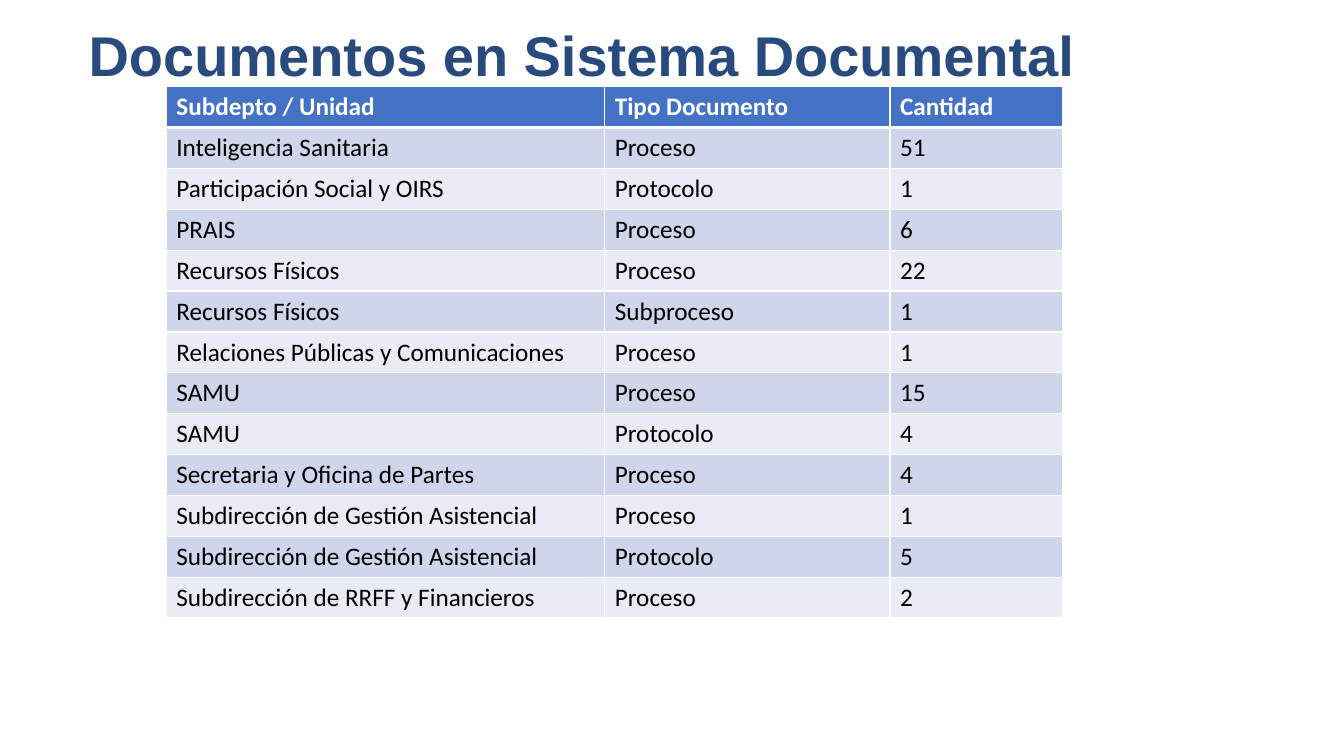
from dataclasses import dataclass
from typing import NamedTuple

from lxml.etree import SubElement
from pptx import Presentation
from pptx.dml.color import RGBColor
from pptx.enum.text import MSO_ANCHOR
from pptx.oxml.ns import qn
from pptx.slide import Slide
from pptx.table import _Cell
from pptx.util import Pt


@dataclass(frozen=True)
class Theme:
    title_font: str = "Arial"
    table_font: str = "Calibri"
    title_size: float = 40
    table_size: float = 18
    title: str = "284A7C"
    header_fill: str = "4472C4"
    header_text: str = "FFFFFF"
    body_text: str = "000000"
    bands: tuple[str, str] = ("CFD5EA", "E9EBF5")
    border: str = "FFFFFF"
    thin: float = 1
    thick: float = 3


class DocumentCount(NamedTuple):
    unit: str
    kind: str
    amount: str


THEME = Theme()
HEADINGS = DocumentCount("Subdepto / Unidad", "Tipo Documento", "Cantidad")
COUNTS = [
    DocumentCount("Inteligencia Sanitaria", "Proceso", "51"),
    DocumentCount("Participación Social y OIRS", "Protocolo", "1"),
    DocumentCount("PRAIS", "Proceso", "6"),
    DocumentCount("Recursos Físicos", "Proceso", "22"),
    DocumentCount("Recursos Físicos", "Subproceso", "1"),
    DocumentCount("Relaciones Públicas y Comunicaciones", "Proceso", "1"),
    DocumentCount("SAMU", "Proceso", "15"),
    DocumentCount("SAMU", "Protocolo", "4"),
    DocumentCount("Secretaria y Oficina de Partes", "Proceso", "4"),
    DocumentCount("Subdirección de Gestión Asistencial", "Proceso", "1"),
    DocumentCount("Subdirección de Gestión Asistencial", "Protocolo", "5"),
    DocumentCount("Subdirección de RRFF y Financieros", "Proceso", "2"),
]
COLUMN_WIDTHS = (313.2, 203.8, 123.1)
ROW_HEIGHT = 29.2


def add_title(slide: Slide, wording: str) -> None:
    heading = slide.shapes.add_textbox(Pt(56.2), Pt(0), Pt(864.7), Pt(104.4)).text_frame
    heading.word_wrap = True
    heading.vertical_anchor = MSO_ANCHOR.MIDDLE
    heading.margin_bottom = Pt(30)
    heading.text = wording
    font = heading.paragraphs[0].font
    font.name, font.size, font.bold = THEME.title_font, Pt(THEME.title_size), True
    font.color.rgb = RGBColor.from_string(THEME.title)


def add_borders(cell: _Cell, top: float, bottom: float) -> None:
    properties = cell._tc.get_or_add_tcPr()
    widths = {"lnL": THEME.thin, "lnR": THEME.thin, "lnT": top, "lnB": bottom}
    for side, width in widths.items():
        line = SubElement(properties, qn(f"a:{side}"), w=str(Pt(width)))
        SubElement(SubElement(line, qn("a:solidFill")), qn("a:srgbClr"), val=THEME.border)


def fill_cell(cell: _Cell, wording: str, row: int) -> None:
    is_header = row == 0
    add_borders(
        cell,
        top=THEME.thick if row == 1 else THEME.thin,
        bottom=THEME.thick if is_header else THEME.thin,
    )
    background = THEME.header_fill if is_header else THEME.bands[(row - 1) % 2]
    cell.fill.solid()
    cell.fill.fore_color.rgb = RGBColor.from_string(background)
    cell.vertical_anchor = MSO_ANCHOR.TOP if is_header else MSO_ANCHOR.MIDDLE
    cell.text = wording
    font = cell.text_frame.paragraphs[0].font
    font.name, font.size, font.bold = THEME.table_font, Pt(THEME.table_size), is_header
    font.color.rgb = RGBColor.from_string(THEME.header_text if is_header else THEME.body_text)


def add_count_table(slide: Slide, rows: list[DocumentCount]) -> None:
    counts = slide.shapes.add_table(
        len(rows), len(COLUMN_WIDTHS), Pt(118.8), Pt(61.9),
        Pt(sum(COLUMN_WIDTHS)), Pt(ROW_HEIGHT * len(rows)),
    ).table
    counts.first_row = counts.horz_banding = False
    for column, width in zip(counts.columns, COLUMN_WIDTHS):
        column.width = Pt(width)
    for row, entry in enumerate(rows):
        counts.rows[row].height = Pt(ROW_HEIGHT)
        for column, wording in enumerate(entry):
            fill_cell(counts.cell(row, column), wording, row)


def main() -> None:
    deck = Presentation()
    deck.slide_width, deck.slide_height = Pt(960), Pt(540)
    slide = deck.slides.add_slide(deck.slide_layouts[6])
    # Heading
    add_title(slide, "Documentos en Sistema Documental")
    # Documents by unit and type
    add_count_table(slide, [HEADINGS, *COUNTS])
    deck.save("out.pptx")


if __name__ == "__main__":
    main()
